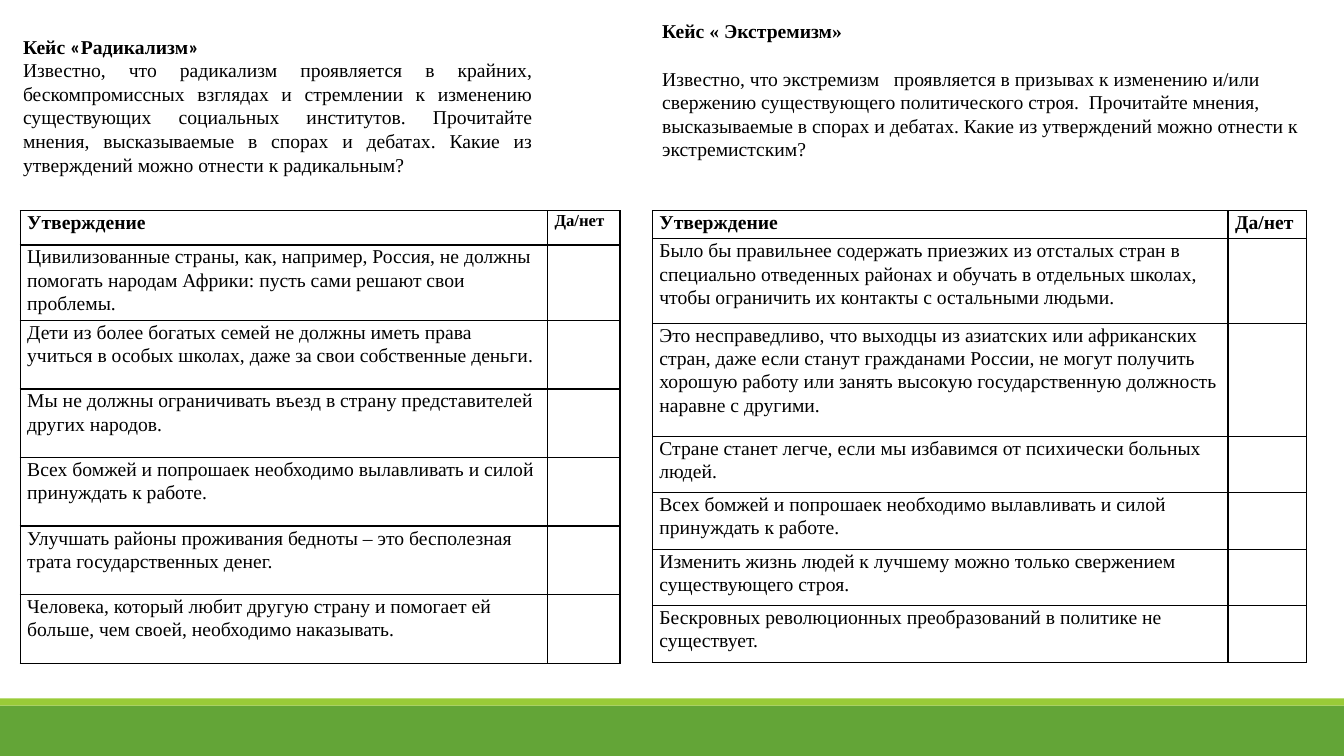
"""Build a slide with two case studies, each an introduction above a yes/no table."""
from lxml import etree
from pptx import Presentation
from pptx.dml.color import RGBColor
from pptx.enum.shapes import MSO_SHAPE
from pptx.enum.text import MSO_ANCHOR, PP_ALIGN
from pptx.oxml.ns import qn
from pptx.util import Inches, Pt

RECTANGLE = MSO_SHAPE.RECTANGLE
TOP, MIDDLE = MSO_ANCHOR.TOP, MSO_ANCHOR.MIDDLE
LEFT, JUSTIFY = PP_ALIGN.LEFT, PP_ALIGN.JUSTIFY

COLORS = {"text": "000000", "border": "000000", "band": "63A537", "stripe": "99CB38"}
SERIF, SANS = "Times New Roman", "Calibri"
SLIDE_WIDTH, SLIDE_HEIGHT = 13.33, 7.5
TABLE_TOP = 2.09
BARS = [("band", 7, 0.5), ("stripe", 6.93, 0.07)]
HEADERS = ["Утверждение", "Да/нет"]

CASES = [
    {
        "title": [("Кейс ", SERIF), ("«", SANS), ("Радикализм", SERIF), ("»", SANS)],
        "intro": "Известно, что радикализм проявляется в крайних, бескомпромиссных взглядах и "
                 "стремлении к изменению существующих социальных институтов. Прочитайте мнения, "
                 "высказываемые в спорах и дебатах. Какие из утверждений можно отнести к радикальным?",
        "intro_box": (0.13, 0.29, 5.25, 1.51),
        "anchor": MIDDLE, "align": JUSTIFY, "intro_gap": 0,
        "table_left": 0.2, "columns": [5.23, 0.72], "answer_size": 12,
        "rows": [0.34] + [0.68] * 6,
        "statements": [
            "Цивилизованные страны, как, например, Россия, не должны помогать народам Африки: "
            "пусть сами решают свои проблемы.",
            "Дети из более богатых семей не должны иметь права учиться в особых школах, "
            "даже за свои собственные деньги.",
            "Мы не должны ограничивать въезд в страну представителей других народов.",
            "Всех бомжей и попрошаек необходимо вылавливать и силой принуждать к работе.",
            "Улучшать районы проживания бедноты – это бесполезная трата государственных денег.",
            "Человека, который любит другую страну и помогает ей больше, чем своей, "
            "необходимо наказывать.",
        ],
    },
    {
        "title": [("Кейс « Экстремизм»", SERIF)],
        "intro": "Известно, что экстремизм   проявляется в призывах к изменению и/или свержению "
                 "существующего политического строя.  Прочитайте мнения, высказываемые в спорах "
                 "и дебатах. Какие из утверждений можно отнести к экстремистским?",
        "intro_box": (6.47, 0.14, 6.67, 1.51),
        "anchor": TOP, "align": LEFT, "intro_gap": 17,
        "table_left": 6.47, "columns": [5.71, 0.78], "answer_size": 14,
        "rows": [0.28, 0.84, 1.12] + [0.56] * 4,
        "statements": [
            "Было бы правильнее содержать приезжих из отсталых стран в специально отведенных "
            "районах и обучать в отдельных школах, чтобы ограничить их контакты с остальными людьми.",
            "Это несправедливо, что выходцы из азиатских или африканских стран, даже если станут "
            "гражданами России, не могут получить хорошую работу или занять высокую "
            "государственную должность наравне с другими.",
            "Стране станет легче, если мы избавимся от психически больных людей.",
            "Всех бомжей и попрошаек необходимо вылавливать и силой принуждать к работе.",
            "Изменить жизнь людей к лучшему можно только свержением существующего строя.",
            "Бескровных революционных преобразований в политике не существует.",
        ],
    },
]

CELL_FORMAT = {
    "margin_left": Inches(0.07), "margin_right": Inches(0.07),
    "margin_top": 0, "margin_bottom": 0, "vertical_anchor": TOP,
}


def set_attributes(target, values):
    for name, value in values.items():
        setattr(target, name, value)


def add_words(paragraph, words, bold=False, size=14, face=SERIF):
    run = paragraph.add_run()
    run.text = words
    set_attributes(run.font, {"name": face, "size": Pt(size), "bold": bold})
    run.font.color.rgb = RGBColor.from_string(COLORS["text"])


def add_bar(slide, color, top, height):
    bar = slide.shapes.add_shape(
        RECTANGLE, 0, Inches(top), Inches(SLIDE_WIDTH), Inches(height))
    bar.shadow.inherit = False
    bar.fill.solid()
    bar.fill.fore_color.rgb = RGBColor.from_string(COLORS[color])
    bar.line.fill.background()


def add_intro(slide, case):
    frame = slide.shapes.add_textbox(*map(Inches, case["intro_box"])).text_frame
    set_attributes(frame, {"word_wrap": True, "vertical_anchor": case["anchor"]})
    heading, intro = frame.paragraphs[0], frame.add_paragraph()
    heading.alignment = intro.alignment = case["align"]
    for words, face in case["title"]:
        add_words(heading, words, bold=True, face=face)
    intro.space_before = Pt(case["intro_gap"])
    add_words(intro, case["intro"])


def add_borders(cell):
    properties = cell._tc.get_or_add_tcPr()
    for side in ("a:lnL", "a:lnR", "a:lnT", "a:lnB"):
        border = etree.SubElement(properties, qn(side), w=str(Pt(1)))
        fill = etree.SubElement(border, qn("a:solidFill"))
        etree.SubElement(fill, qn("a:srgbClr"), val=COLORS["border"])


def add_statements(slide, case):
    columns, rows = case["columns"], case["rows"]
    table = slide.shapes.add_table(
        len(rows), len(columns), Inches(case["table_left"]), Inches(TABLE_TOP),
        Inches(sum(columns)), Inches(sum(rows))).table
    set_attributes(table, {"first_row": False, "horz_banding": False})
    for column, width in zip(table.columns, columns):
        column.width = Inches(width)
    content = [HEADERS] + [[statement, ""] for statement in case["statements"]]
    for row_index, (height, texts) in enumerate(zip(rows, content)):
        table.rows[row_index].height = Inches(height)
        for column_index, words in enumerate(texts):
            cell = table.cell(row_index, column_index)
            set_attributes(cell, CELL_FORMAT)
            add_borders(cell)
            cell.fill.background()
            if words:
                paragraph = cell.text_frame.paragraphs[0]
                paragraph.line_spacing = 1.07
                size = case["answer_size"] if column_index else 14
                add_words(paragraph, words, bold=row_index == 0, size=size)


def main():
    presentation = Presentation()
    presentation.slide_width = Inches(SLIDE_WIDTH)
    presentation.slide_height = Inches(SLIDE_HEIGHT)
    slide = presentation.slides.add_slide(presentation.slide_layouts[6])
    for bar in BARS:
        add_bar(slide, *bar)
    for case in CASES:
        add_intro(slide, case)
        add_statements(slide, case)
    presentation.save("out.pptx")


if __name__ == "__main__":
    main()
